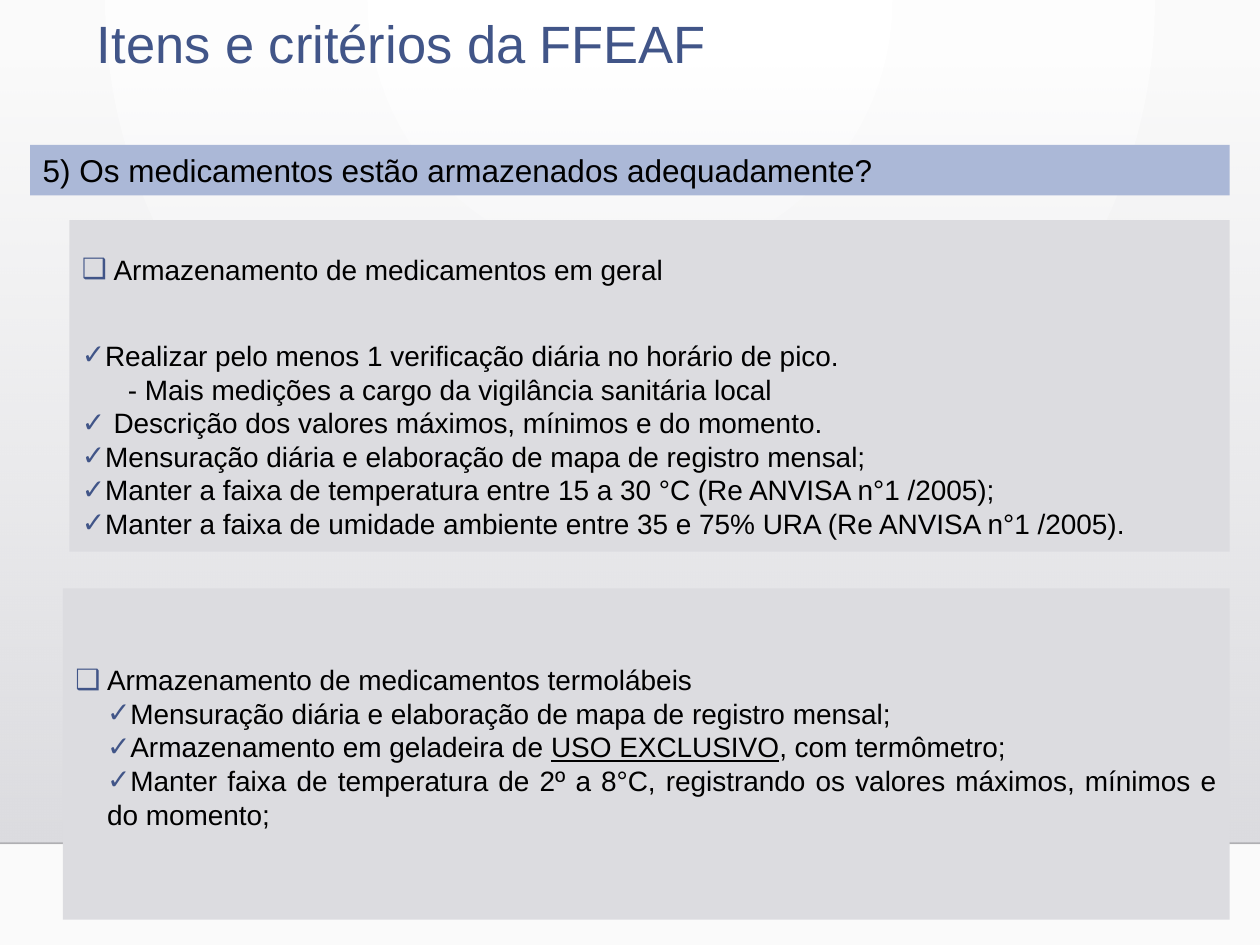
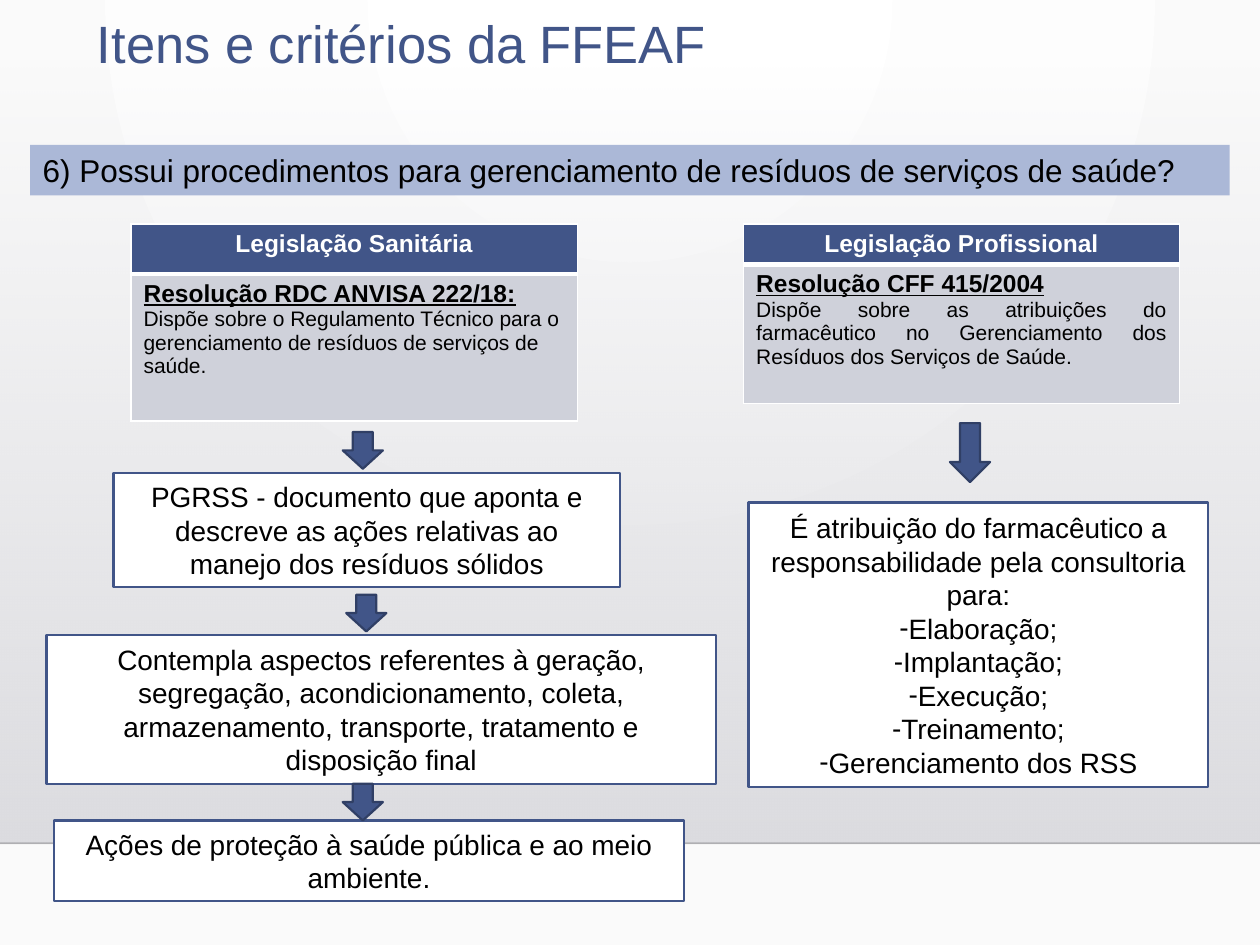
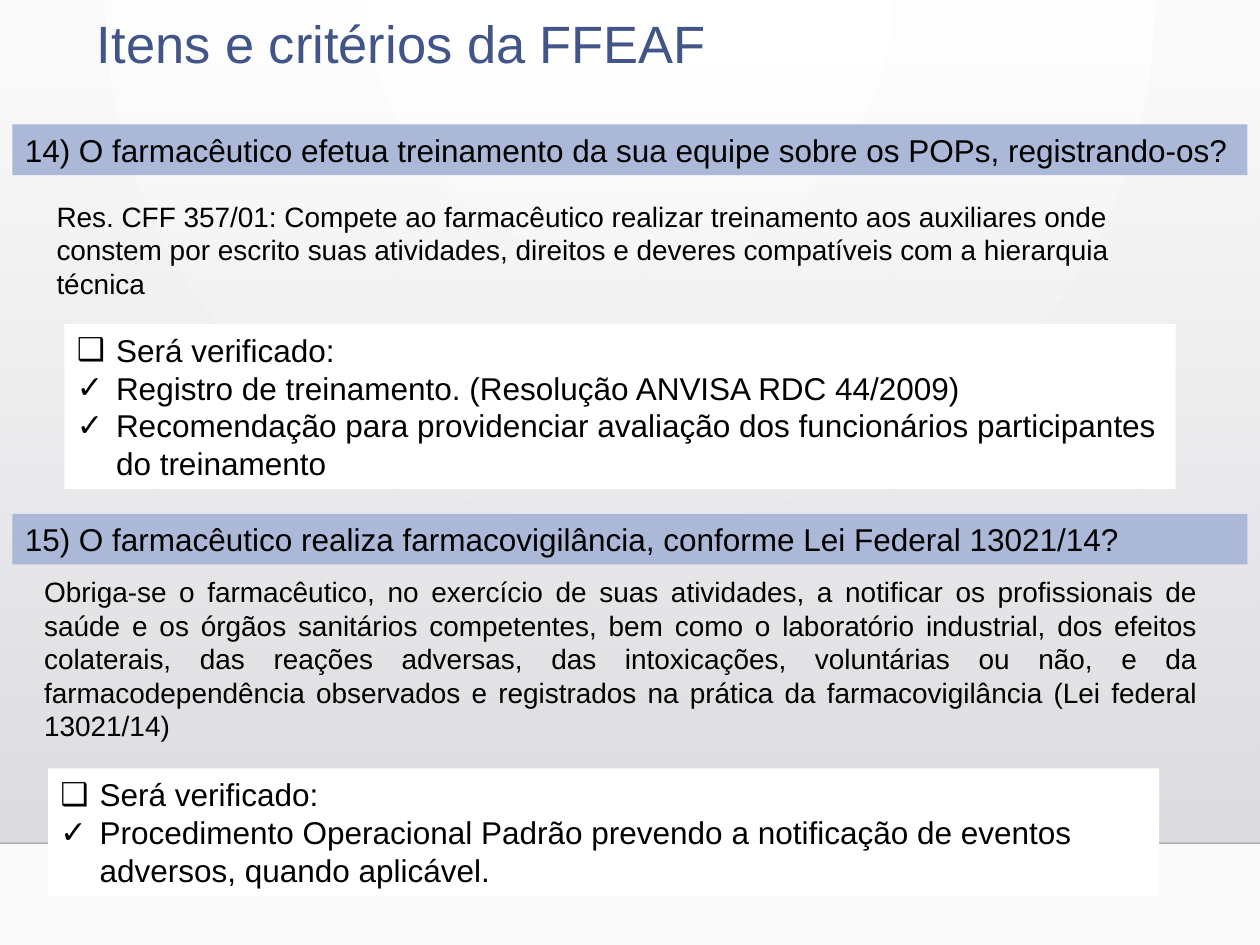
from dataclasses import dataclass
from typing import NamedTuple

from pptx import Presentation
from pptx.dml.color import RGBColor
from pptx.enum.shapes import MSO_CONNECTOR, MSO_SHAPE
from pptx.enum.text import MSO_ANCHOR, PP_ALIGN
from pptx.oxml import parse_xml
from pptx.oxml.ns import nsdecls, qn
from pptx.oxml.xmlchemy import OxmlElement
from pptx.util import Cm, Pt

COLORS = {
    "blue": "415588", "blue_edge": "303F65", "band": "ABB8D7", "panel": "DCDCE0",
    "cell": "CFD1DA", "white": "FFFFFF", "black": "000000", "rule": "000001",
    "back_edge": "FAFAFA", "shade": "DEDEE2",
}
FONT = "Arial"
TITLE = "Itens e critérios da FFEAF"
CHECK, SQUARE = "✓", "❑"
HANG, WIDE_HANG = 0.64, 0.79
WIDTH, HEIGHT, FLOOR = 25.4, 19.05, 17.0


class Box(NamedTuple):
    x: float
    y: float
    w: float
    h: float

    def lengths(self) -> list:
        return [Cm(v) for v in self]


@dataclass
class Para:
    text: str
    bullet: str = ""
    bullet_color: str = "black"
    left: float = 0
    hang: float = 0
    before: float = 0
    align: PP_ALIGN = PP_ALIGN.LEFT
    size: float = 16
    color: str = "black"
    bold: bool = False
    underline: bool = False
    marked: str = ""  # part of the text to underline


@dataclass
class LawTable:
    x: float
    width: float
    rows: tuple
    head: str
    law: str
    summary: str
    align: PP_ALIGN


def rgb(name: str) -> RGBColor:
    return RGBColor.from_string(COLORS[name])


# Text
def add_run(p, text: str, *, size=16, color="black", bold=False, underline=False) -> None:
    r = p.add_run()
    r.text = text
    f = r.font
    f.name, f.size, f.bold, f.underline = FONT, Pt(size), bold, underline
    f.color.rgb = rgb(color)


def add_bullet(p, char: str, color: str) -> None:
    pPr = p._p.get_or_add_pPr()
    bu_color = OxmlElement("a:buClr")
    clr = OxmlElement("a:srgbClr")
    clr.set("val", COLORS[color])
    bu_color.append(clr)
    bu_font = OxmlElement("a:buFont")
    bu_font.set("typeface", FONT)
    bu_char = OxmlElement("a:buChar")
    bu_char.set("char", char)
    pPr.extend([bu_color, bu_font, bu_char])


def fill_text(tf, paras: list[Para]) -> None:
    tf.word_wrap = True
    for i, para in enumerate(paras):
        p = tf.add_paragraph() if i else tf.paragraphs[0]
        p.alignment = para.align
        p.space_before = Pt(para.before)
        pPr = p._p.get_or_add_pPr()
        pPr.set("marL", str(Cm(para.left)))
        pPr.set("indent", str(-Cm(para.hang)))
        if para.bullet:
            add_bullet(p, para.bullet, para.bullet_color)
        pieces = para.text.partition(para.marked) if para.marked else (para.text,)
        for piece in pieces:
            add_run(p, piece, size=para.size, color=para.color, bold=para.bold,
                    underline=para.underline or piece == para.marked)


# Shapes
def add_block(s, box: Box, fill: str, paras: list[Para] = (), *, line="",
              kind=MSO_SHAPE.RECTANGLE, top=None):
    sp = s.shapes.add_shape(kind, *box.lengths())
    sp.shadow.inherit = False
    sp.fill.solid()
    sp.fill.fore_color.rgb = rgb(fill)
    if line:
        sp.line.color.rgb = rgb(line)
        sp.line.width = Pt(1.25)
    else:
        sp.line.fill.background()
    if paras:
        fill_text(sp.text_frame, paras)
    if top is not None:
        sp.text_frame.vertical_anchor = MSO_ANCHOR.TOP
        sp.text_frame.margin_top = Cm(top)
    return sp


def add_note(s, box: Box, text: str, align=PP_ALIGN.LEFT) -> None:
    fill_text(s.shapes.add_textbox(*box.lengths()).text_frame, [Para(text, align=align)])


def add_question(s, text: str, x: float, y: float) -> None:
    add_block(s, Box(x, y, WIDTH - 2 * x, 1.02), "band", [Para(text, size=18)])


def add_checklist(s, box: Box, items: list[str]) -> None:
    paras = [Para(t, CHECK if i else SQUARE, left=WIDE_HANG, hang=WIDE_HANG, size=18)
             for i, t in enumerate(["Será verificado:", *items])]
    add_block(s, box, "white", paras)


def add_arrow(s, x: float, y: float, h: float = 0.74) -> None:
    add_block(s, Box(x, y, 0.81, h), "blue", line="blue_edge", kind=MSO_SHAPE.DOWN_ARROW)


def set_borders(cell, bottom: float) -> None:
    tcPr = cell._tc.get_or_add_tcPr()
    edges = [("lnL", 1), ("lnR", 1), ("lnT", 1), ("lnB", bottom)]
    for i, (tag, width) in enumerate(edges):
        tcPr.insert(i, parse_xml(
            f'<a:{tag} {nsdecls("a")} w="{Pt(width)}"><a:solidFill>'
            f'<a:srgbClr val="{COLORS["white"]}"/></a:solidFill></a:{tag}>'))


def add_law(s, law: LawTable) -> None:
    box = Box(law.x, 4.52, law.width, sum(law.rows))
    table = s.shapes.add_table(2, 1, *box.lengths()).table
    contents = [
        ("blue", 3, [Para(law.head, size=14, bold=True, color="white", align=PP_ALIGN.CENTER)]),
        ("cell", 1, [Para(law.law, size=14, bold=True, underline=True),
                     Para(law.summary, size=12, align=law.align)]),
    ]
    for i, (fill, bottom, paras) in enumerate(contents):
        table.rows[i].height = Cm(law.rows[i])
        cell = table.cell(i, 0)
        cell.fill.solid()
        cell.fill.fore_color.rgb = rgb(fill)
        set_borders(cell, bottom)
        fill_text(cell.text_frame, paras)


# Shared background, kept on the layout
def dress_layout(layout, s) -> None:
    layout.element.find(qn("p:cSld")).insert(0, parse_xml(
        f'<p:bg {nsdecls("p", "a")}><p:bgPr><a:gradFill rotWithShape="1"><a:gsLst>'
        f'<a:gs pos="0"><a:srgbClr val="{COLORS["white"]}"/></a:gs>'
        f'<a:gs pos="100000"><a:srgbClr val="{COLORS["back_edge"]}"/></a:gs></a:gsLst>'
        '<a:path path="circle"><a:fillToRect l="43000" r="43000" b="100000"/></a:path>'
        '</a:gradFill><a:effectLst/></p:bgPr></p:bg>'))

    shade = add_block(s, Box(0, 1.3, WIDTH, FLOOR - 1.3), "shade")
    solid = shade.element.spPr.find(qn("a:solidFill"))
    solid.getparent().replace(solid, parse_xml(
        f'<a:gradFill {nsdecls("a")}><a:gsLst><a:gs pos="0">'
        f'<a:srgbClr val="{COLORS["panel"]}"><a:alpha val="0"/></a:srgbClr></a:gs>'
        f'<a:gs pos="100000"><a:srgbClr val="{COLORS["shade"]}"/></a:gs></a:gsLst>'
        '<a:lin ang="5400000" scaled="0"/></a:gradFill>'))

    rule = s.shapes.add_connector(MSO_CONNECTOR.STRAIGHT, 0, Cm(FLOOR), Cm(WIDTH), Cm(FLOOR))
    rule.line.color.rgb = rgb("rule")
    rule.line.width = Pt(1)
    alpha = OxmlElement("a:alpha")
    alpha.set("val", "20000")
    rule.element.spPr.find(".//" + qn("a:srgbClr")).append(alpha)
    rule.element.spPr.append(OxmlElement("a:effectLst"))
    for i, sp in enumerate((shade, rule)):
        layout.shapes.element.insert(2 + i, sp.element)


def new_slide(prs):
    s = prs.slides.add_slide(prs.slide_layouts[5])
    title = s.shapes.title
    title.left, title.top, title.width, title.height = Box(1.7, 0.23, 14.91, 2.21).lengths()
    tf = title.text_frame
    fill_text(tf, [Para(TITLE, size=30, color="blue")])
    tf.vertical_anchor = MSO_ANCHOR.TOP
    tf.paragraphs[0].line_spacing = 0.9
    return s


# Slides
def storage_slide(s) -> None:
    add_question(s, "5) Os medicamentos estão armazenados adequadamente?", 0.61, 2.92)

    def item(text: str, bullet: str = CHECK, **kw) -> Para:
        return Para(text, bullet, "blue", align=PP_ALIGN.JUSTIFY, **kw)

    add_block(s, Box(1.4, 4.44, 23.39, 6.68), "panel", [
        item("Armazenamento de medicamentos em geral", SQUARE, left=HANG, hang=HANG),
        item("Realizar pelo menos 1 verificação diária no horário de pico.", before=30),
        item("- Mais medições a cargo da vigilância sanitária local", "", left=0.93),
        item("Descrição dos valores máximos, mínimos e do momento.", left=HANG, hang=HANG),
        item("Mensuração diária e elaboração de mapa de registro mensal;"),
        item("Manter a faixa de temperatura entre 15 a 30 °C (Re ANVISA n°1 /2005);"),
        item("Manter a faixa de umidade ambiente entre 35 e 75% URA (Re ANVISA n°1 /2005)."),
    ], top=0.65)
    add_block(s, Box(1.27, 11.86, 23.52, 6.68), "panel", [
        item("Armazenamento de medicamentos termolábeis", SQUARE, left=HANG, hang=HANG),
        item("Mensuração diária e elaboração de mapa de registro mensal;", left=HANG),
        item("Armazenamento em geladeira de USO EXCLUSIVO, com termômetro;", left=HANG,
             marked="USO EXCLUSIVO"),
        item("Manter faixa de temperatura de 2º a 8°C, registrando os valores máximos, "
             "mínimos e do momento;", left=HANG),
    ], top=1.5)


def waste_slide(s) -> None:
    add_question(s, "6) Possui procedimentos para gerenciamento de resíduos de serviços de saúde?",
                 0.61, 2.92)
    for law in (
        LawTable(2.64, 9.0, (1.0, 2.97), "Legislação Sanitária", "Resolução RDC ANVISA 222/18:",
                 "Dispõe sobre o Regulamento Técnico para o gerenciamento de resíduos de "
                 "serviços de saúde.", PP_ALIGN.LEFT),
        LawTable(14.99, 8.79, (0.81, 2.8), "Legislação Profissional", "Resolução CFF 415/2004",
                 "Dispõe sobre as atribuições do farmacêutico no Gerenciamento dos Resíduos "
                 "dos Serviços de Saúde.", PP_ALIGN.JUSTIFY),
    ):
        add_law(s, law)

    steps = [
        (Box(2.29, 9.53, 10.21, 2.31),
         "PGRSS - documento que aponta e descreve as ações relativas ao manejo dos "
         "resíduos sólidos"),
        (Box(0.94, 12.8, 13.49, 3.0),
         "Contempla aspectos referentes à geração, segregação, acondicionamento, coleta, "
         "armazenamento, transporte, tratamento e disposição final"),
        (Box(1.09, 16.54, 12.7, 1.63),
         "Ações de proteção à saúde pública e ao meio ambiente."),
    ]
    for box, text in steps:
        add_block(s, box, "white", [Para(text, align=PP_ALIGN.CENTER)], line="blue")

    duties = ["Elaboração;", "Implantação;", "Execução;", "Treinamento;", "Gerenciamento dos RSS"]
    intro = "É atribuição do farmacêutico a responsabilidade pela consultoria para:"
    add_block(s, Box(15.09, 10.13, 9.27, 5.74), "white",
              [Para(intro, align=PP_ALIGN.CENTER)]
              + [Para(d, "-", align=PP_ALIGN.CENTER) for d in duties], line="blue")

    for x, y in ((6.91, 8.71), (6.98, 11.99), (6.91, 15.8)):
        add_arrow(s, x, y)
    add_arrow(s, 19.15, 8.53, 1.19)


def training_slide(s) -> None:
    add_question(s, "14) O farmacêutico efetua treinamento da sua equipe sobre os POPs, "
                 "registrando-os?", 0.25, 2.51)
    add_note(s, Box(0.89, 3.89, 23.19, 2.31),
             "Res. CFF 357/01: Compete ao farmacêutico realizar treinamento aos auxiliares onde "
             "constem por escrito suas atividades, direitos e deveres compatíveis com a "
             "hierarquia técnica")
    add_checklist(s, Box(1.3, 6.53, 22.4, 3.33), [
        "Registro de treinamento. (Resolução ANVISA RDC 44/2009)",
        "Recomendação para providenciar avaliação dos funcionários participantes do treinamento",
    ])
    add_question(s, "15) O farmacêutico realiza farmacovigilância, conforme Lei Federal 13021/14?",
                 0.25, 10.36)
    add_note(s, Box(0.64, 11.46, 23.75, 3.68),
             "Obriga-se o farmacêutico, no exercício de suas atividades, a notificar os "
             "profissionais de saúde e os órgãos sanitários competentes, bem como o laboratório "
             "industrial, dos efeitos colaterais, das reações adversas, das intoxicações, "
             "voluntárias ou não, e da farmacodependência observados e registrados na prática da "
             "farmacovigilância (Lei federal 13021/14)", PP_ALIGN.JUSTIFY)
    add_checklist(s, Box(0.97, 15.49, 22.4, 2.57), [
        "Procedimento Operacional Padrão prevendo a notificação de eventos adversos, "
        "quando aplicável.",
    ])


def main() -> None:
    prs = Presentation()
    prs.slide_width, prs.slide_height = Cm(WIDTH), Cm(HEIGHT)
    for i, build in enumerate((storage_slide, waste_slide, training_slide)):
        s = new_slide(prs)
        if i == 0:
            dress_layout(prs.slide_layouts[5], s)
        build(s)
    prs.save("out.pptx")


if __name__ == "__main__":
    main()
